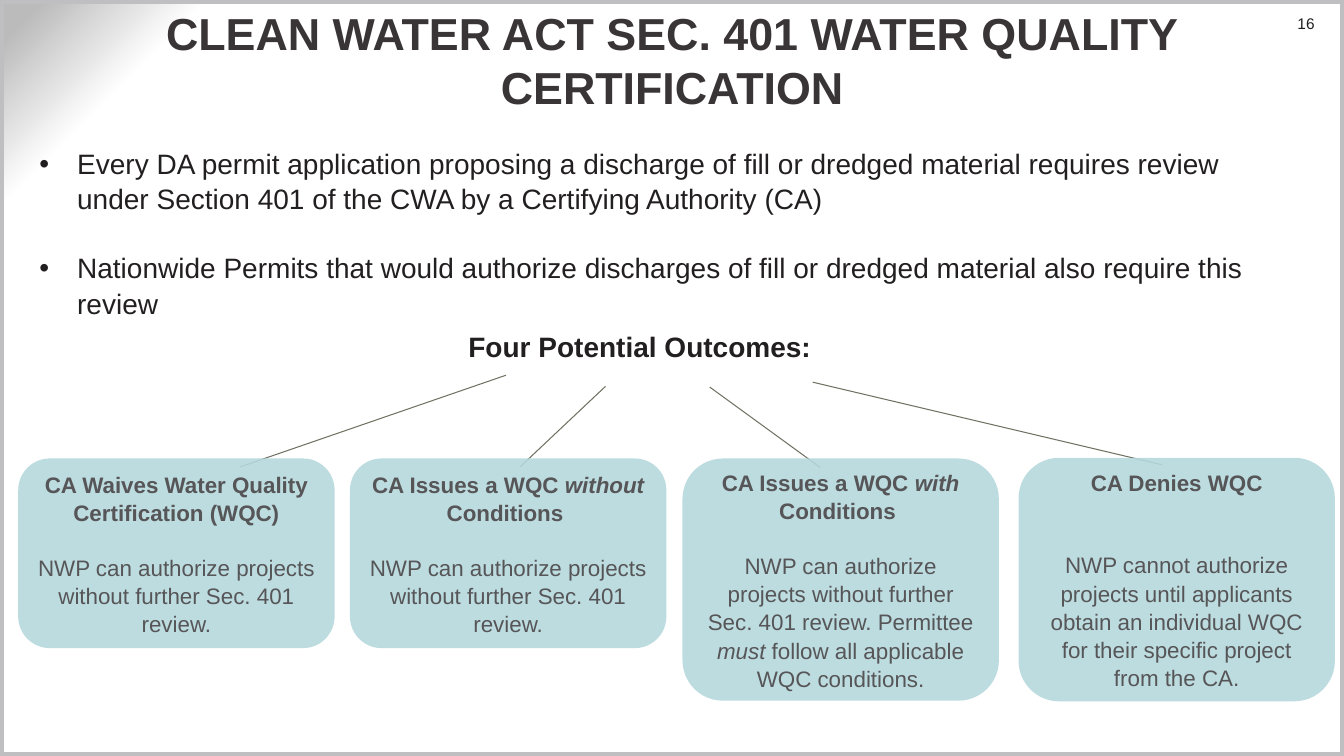
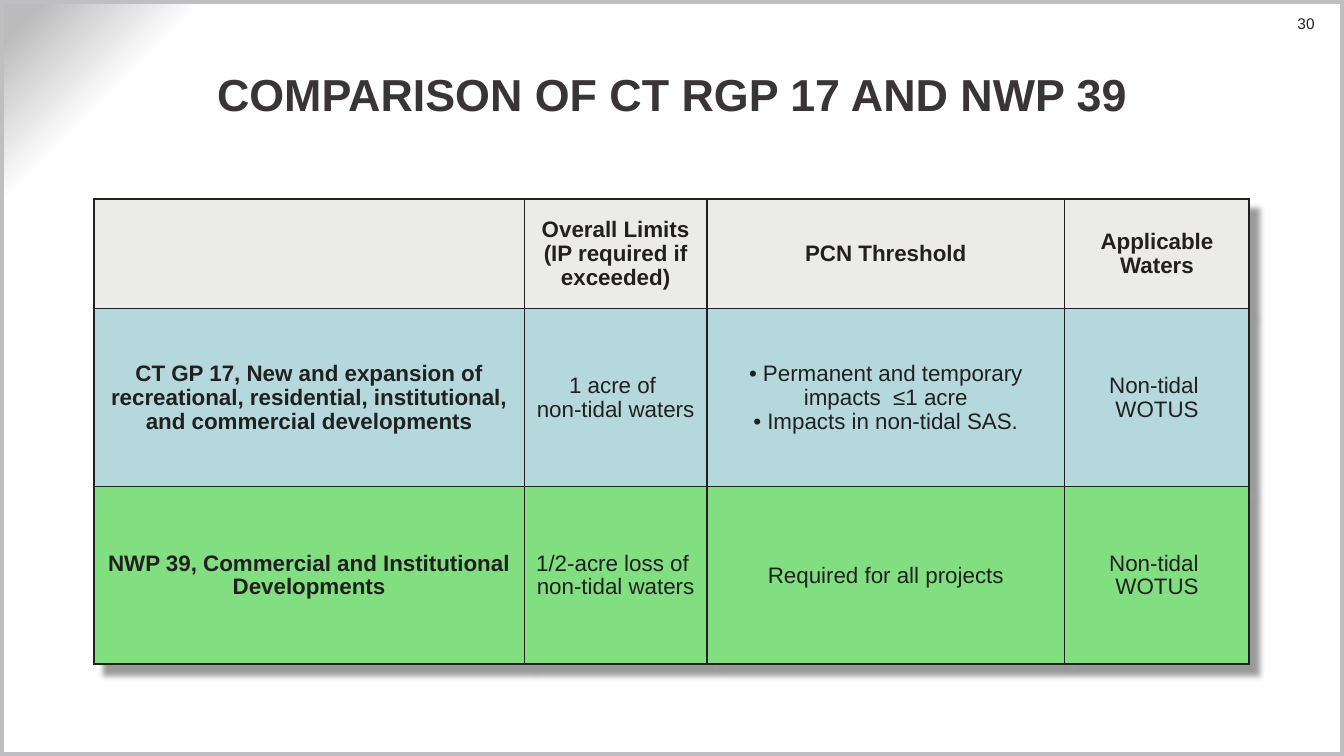
from lxml import etree
from pptx import Presentation
from pptx.dml.color import RGBColor
from pptx.enum.shapes import MSO_CONNECTOR, MSO_SHAPE
from pptx.enum.text import MSO_ANCHOR as ANCHOR, PP_ALIGN as ALIGN
from pptx.oxml import parse_xml
from pptx.oxml.ns import nsdecls, qn
from pptx.util import Pt

INK, TITLE, GREY, TEAL, GREEN = "221F20", "393436", "565557", "B5D8DD", "81DF81"
HEADER, FRAME, LINE = "EBEBEA", "BFBFC2", "707162"
W, H = 960, 540
NS = nsdecls("a")


def style(font, size, color, bold=False, italic=False):
    font.name, font.size, font.bold, font.italic = "Arial", Pt(size), bold, italic
    font.color.rgb = RGBColor.from_string(color)


def add_text(s, box, text, size, color, bold=False, align=ALIGN.LEFT,
             anchor=ANCHOR.TOP, margins=(7.2, 3.6, 7.2, 3.6)):
    tf = s.shapes.add_textbox(*map(Pt, box)).text_frame
    tf.word_wrap, tf.vertical_anchor = True, anchor
    tf.margin_left, tf.margin_top, tf.margin_right, tf.margin_bottom = map(Pt, margins)
    tf.text = text
    for p in tf.paragraphs:
        p.alignment = align
        for r in p.runs:
            style(r.font, size, color, bold)
    return tf


prs = Presentation()
prs.slide_width, prs.slide_height = Pt(W), Pt(H)

# Shared background: grey glow in the top left corner
master = prs.slide_master
master.background.fill.solid()
solid = master.element.find(".//" + qn("p:bgPr")).find(qn("a:solidFill"))
stops = "".join(f'<a:gs pos="{pos}000"><a:srgbClr val="{color}"/></a:gs>'
                for pos, color in [(87, "FFFFFF"), (90, "FFFFFF"), (98, "BBBBBC")])
solid.getparent().replace(solid, parse_xml(
    f'<a:gradFill {NS} rotWithShape="1"><a:gsLst>{stops}</a:gsLst><a:path path="circle">'
    '<a:fillToRect l="100000" t="100000"/></a:path></a:gradFill>'))

# Shared page number, frame and title
pages = [("16", "CLEAN WATER ACT SEC. 401 WATER QUALITY CERTIFICATION", 10),
         ("30", "COMPARISON OF CT RGP 17 AND NWP 39", 34)]
slides = []
for number, title, top in pages:
    s = prs.slides.add_slide(prs.slide_layouts[6])
    add_text(s, (895.5, 10, 43.5, 13.5), number, 11, INK, align=ALIGN.RIGHT,
             margins=(7.2, 0, 0, 0))
    frame = s.shapes.add_shape(MSO_SHAPE.RECTANGLE, 0, 0, Pt(W), Pt(H))
    frame.shadow.inherit = False
    frame.fill.background()
    frame.line.color.rgb, frame.line.width = RGBColor.from_string(FRAME), Pt(6)
    add_text(s, (77.5, top, 805.5, 65.5), title, 32, TITLE, True, ALIGN.CENTER,
             ANCHOR.MIDDLE, (3.6, 0, 3.6, 0))
    slides.append(s)

# Slide 1: bullets and heading
s = slides[0]
tf = add_text(s, (21, 100, 896.5, 134),
              "Every DA permit application proposing a discharge of fill or dredged material "
              "requires review under Section 401 of the CWA by a Certifying Authority (CA)\n"
              "Nationwide Permits that would authorize discharges of fill or dredged material "
              "also require this review", 20, INK)
for p in tf.paragraphs:
    p.line_spacing = 1.05
    pPr = p._p.get_or_add_pPr()
    pPr.set("marL", str(Pt(27)))
    pPr.set("indent", str(-Pt(27)))
    etree.SubElement(pPr, qn("a:buFont")).set("typeface", "Arial")
    etree.SubElement(pPr, qn("a:buChar")).set("char", "•")
tf.paragraphs[1].space_before = Pt(24)
add_text(s, (327.5, 232, 352, 31.5), "Four Potential Outcomes:", 20, INK, True)

# Lines from the heading to the outcomes
for ends in [(361.5, 268, 171.5, 333.5), (432.5, 276, 371.5, 333.5),
             (507, 276.5, 586, 334), (580.5, 273, 830, 332)]:
    ln = s.shapes.add_connector(MSO_CONNECTOR.STRAIGHT, *map(Pt, ends))
    ln.line.color.rgb, ln.line.width = RGBColor.from_string(LINE), Pt(0.75)
    etree.SubElement(ln._element.spPr, qn("a:effectLst"))

# Outcome cards: left, top, height, gap, heading runs, body runs; True marks italics
no_review = [("NWP can authorize projects without further Sec. 401 review.", False)]
cards = [
    (13, 327.5, 135.5, 19.3, [("CA Waives Water Quality Certification (WQC)", False)], no_review),
    (250, 327.5, 135.5, 19.3,
     [("CA Issues a WQC ", False), ("without ", True), ("Conditions ", False)], no_review),
    (487.5, 327.5, 173, 19.3,
     [("CA Issues a WQC ", False), ("with", True), (" Conditions ", False)],
     [("NWP can authorize projects without further Sec. 401 review. Permittee ", False),
      ("must ", True), ("follow all applicable WQC conditions.", False)]),
    (727.5, 327, 174, 38.6, [("CA Denies WQC", False)],
     [("NWP cannot authorize projects until applicants obtain an individual WQC "
       "for their specific project from the CA.", False)]),
]
for left, top, height, gap, heading, body in cards:
    sp = s.shapes.add_shape(MSO_SHAPE.ROUNDED_RECTANGLE, Pt(left), Pt(top), Pt(226), Pt(height))
    sp.shadow.inherit = False
    sp.line.fill.background()
    sp.fill.solid()
    sp.fill.fore_color.rgb = RGBColor.from_string(TEAL)
    color = sp._element.spPr.find(qn("a:solidFill"))[0]
    etree.SubElement(color, qn("a:alpha")).set("val", "89000")
    tf = sp.text_frame
    tf.word_wrap, tf.vertical_anchor = True, ANCHOR.MIDDLE
    for p, runs, bold in [(tf.paragraphs[0], heading, True), (tf.add_paragraph(), body, False)]:
        p.alignment, p.line_spacing = ALIGN.CENTER, 1.05
        for text, italic in runs:
            r = p.add_run()
            r.text = text
            style(r.font, 16, GREY, bold, italic)
    p.space_before = Pt(gap)

# Slide 2: comparison table
s = slides[1]
rows = [
    ("", "Overall Limits\n(IP required if exceeded)", "PCN Threshold", "Applicable Waters"),
    ("CT GP 17, New and expansion of recreational, residential, institutional, "
     "and commercial developments", "1 acre of \nnon-tidal waters",
     "• Permanent and temporary impacts  ≤1 acre\n• Impacts in non-tidal SAS.",
     "Non-tidal \nWOTUS"),
    ("NWP 39, Commercial and Institutional Developments",
     "1/2-acre loss of \nnon-tidal waters", "Required for all projects", "Non-tidal \nWOTUS"),
]
widths, heights, fills = [307.5, 130.5, 255.5, 132], [78.5, 127, 127], [HEADER, TEAL, GREEN]
table = s.shapes.add_table(len(rows), len(widths), Pt(67), Pt(142),
                           Pt(sum(widths)), Pt(sum(heights))).table
for col, width in zip(table.columns, widths):
    col.width = Pt(width)
for row, height in zip(table.rows, heights):
    row.height = Pt(height)

# Soft shadow below and to the right
table._tbl.tblPr.insert(0, parse_xml(
    f'<a:effectLst {NS}><a:outerShdw blurRad="{Pt(4)}" dist="{Pt(10)}" dir="2700000" '
    'algn="tl" rotWithShape="0"><a:srgbClr val="000000"><a:alpha val="40000"/></a:srgbClr>'
    '</a:outerShdw></a:effectLst>'))

# Cells: thick outer borders, thin inner ones
last_row, last_col = len(rows) - 1, len(widths) - 1
for i, texts in enumerate(rows):
    for j, text in enumerate(texts):
        cell = table.cell(i, j)
        cell.fill.solid()
        cell.fill.fore_color.rgb = RGBColor.from_string(fills[i])
        cell.vertical_anchor = ANCHOR.MIDDLE
        cell.margin_left = cell.margin_right = cell.margin_top = Pt(0.75)
        cell.margin_bottom = 0
        cell.text_frame.text = text
        for p in cell.text_frame.paragraphs:
            p.alignment, p.line_spacing = ALIGN.CENTER, 0.96
            for r in p.runs:
                style(r.font, 16, INK, i == 0 or j == 0)
        sides = [("lnL", j == 0), ("lnR", j == last_col), ("lnT", i == 0), ("lnB", i == last_row)]
        for k, (side, outer) in enumerate(sides):
            cell._tc.get_or_add_tcPr().insert(k, parse_xml(
                f'<a:{side} {NS} w="{Pt(1.5 if outer else 1)}"><a:solidFill>'
                f'<a:srgbClr val="{INK}"/></a:solidFill></a:{side}>'))

prs.save("out.pptx")
